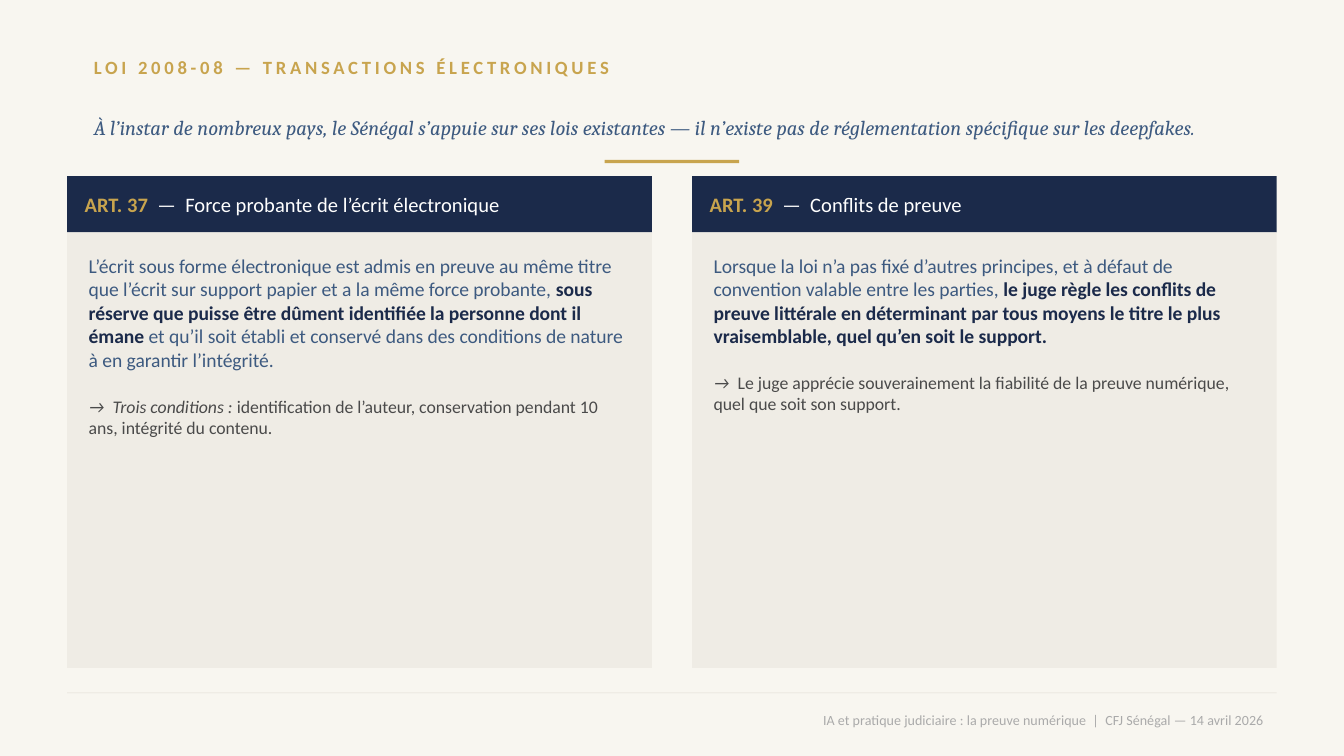
from dataclasses import dataclass

from pptx import Presentation
from pptx import util as u
from pptx.dml.color import RGBColor
from pptx.enum import shapes, text

PX = u.Inches(1) // 200  # 200 px to the inch


@dataclass(frozen=True)
class Theme:
    paper: str = "F8F6F0"
    panel: str = "EFECE5"
    navy: str = "1B2A4A"
    blue: str = "3D5A80"
    gold: str = "C8A44E"
    white: str = "FFFFFF"
    dark: str = "4A4A4A"
    pale: str = "AAAAAA"
    sans: str = "Calibri"
    serif: str = "Cambria"
    heading: float = 11
    kicker: float = 10
    body: float = 10.5
    note: float = 9.5
    footer: float = 7.5
    note_gap: float = 12.8


@dataclass(frozen=True)
class Span:
    words: str
    size: float
    color: str
    bold: bool = False
    italic: bool = False
    font: str = Theme.sans
    spacing: int = 0  # points between letters


class SlideBuilder:
    def __init__(self, deck, theme):
        self.theme = theme
        self.slide = deck.slides.add_slide(deck.slide_layouts[6])
        fill = self.slide.background.fill
        fill.solid()
        fill.fore_color.rgb = RGBColor.from_string(theme.paper)

    def rect(self, left, top, width, height, color):
        box = self.slide.shapes.add_shape(
            shapes.MSO_SHAPE.RECTANGLE, *(n * PX for n in (left, top, width, height)))
        box.shadow.inherit = False
        box.fill.solid()
        box.fill.fore_color.rgb = RGBColor.from_string(color)
        box.line.fill.background()
        return box

    def label(self, left, top, width, height, span, align=text.PP_ALIGN.LEFT):
        box = self.slide.shapes.add_textbox(*(n * PX for n in (left, top, width, height)))
        self.fill_text(box, [[span]], (20, 10, 20, 10), text.MSO_ANCHOR.MIDDLE, align)

    def fill_text(self, box, paragraphs, insets, anchor, align=text.PP_ALIGN.LEFT):
        """Fill a box; every paragraph after the first is set off by the note gap."""
        frame = box.text_frame
        frame.word_wrap = True
        frame.vertical_anchor = anchor
        (frame.margin_left, frame.margin_top,
         frame.margin_right, frame.margin_bottom) = (n * PX for n in insets)
        for index, spans in enumerate(paragraphs):
            para = frame.add_paragraph() if index else frame.paragraphs[0]
            para.alignment = align
            if index:
                para.space_before = u.Pt(self.theme.note_gap)
            for span in spans:
                self.add_run(para, span)

    def add_run(self, para, span):
        run = para.add_run()
        run.text = span.words
        font = run.font
        font.name, font.size = span.font, u.Pt(span.size)
        font.bold, font.italic = span.bold, span.italic
        font.color.rgb = RGBColor.from_string(span.color)
        if span.spacing:
            run._r.get_or_add_rPr().set("spc", str(span.spacing * 100))

    def article(self, left, number, title, law, note):
        """Draw one column: navy title bar above a panel with the law and a note."""
        theme, top, width, bar = self.theme, 262, 870, 84
        header = self.rect(left, top, width, bar, theme.navy)
        self.fill_text(header, [[
            Span(number, theme.heading, theme.gold, bold=True),
            Span(f"  —  {title}", theme.heading, theme.white),
        ]], (26, 10, 26, 10), text.MSO_ANCHOR.MIDDLE)
        panel = self.rect(left, top + bar, width, 648, theme.panel)
        law_spans = [Span(words, theme.body, theme.navy if strong else theme.blue, bold=strong)
                     for words, strong in law]
        note_spans = [Span(words, theme.note, theme.dark, italic=slanted)
                      for words, slanted in note]
        self.fill_text(panel, [law_spans, note_spans], (32, 32, 32, 10), text.MSO_ANCHOR.TOP)


ARTICLES = [
    ("ART. 37", "Force probante de l’écrit électronique",
     [("L’écrit sous forme électronique est admis en preuve au même titre que l’écrit "
       "sur support papier et a la même force probante, ", False),
      ("sous réserve que puisse être dûment identifiée la personne dont il émane", True),
      (" et qu’il soit établi et conservé dans des conditions de nature à en garantir "
       "l’intégrité.", False)],
     [("→  Trois conditions : ", True),
      ("identification de l’auteur, conservation pendant 10 ans, intégrité du contenu.",
       False)]),
    ("ART. 39", "Conflits de preuve",
     [("Lorsque la loi n’a pas fixé d’autres principes, et à défaut de convention valable "
       "entre les parties, ", False),
      ("le juge règle les conflits de preuve littérale en déterminant par tous moyens le "
       "titre le plus vraisemblable, quel qu’en soit le support.", True)],
     [("→  ", True),
      ("Le juge apprécie souverainement la fiabilité de la preuve numérique, quel que soit "
       "son support.", False)]),
]


def main():
    deck = Presentation()
    deck.slide_width, deck.slide_height = 2000 * PX, 1125 * PX
    theme = Theme()
    page = SlideBuilder(deck, theme)

    page.rect(100, 1030, 1800, 2, theme.panel)
    page.label(100, 1036, 1800, 70, Span(
        "IA et pratique judiciaire : la preuve numérique  |  CFJ Sénégal — 14 avril 2026",
        theme.footer, theme.pale), text.PP_ALIGN.RIGHT)
    page.label(120, 60, 1760, 80, Span(
        "LOI 2008-08 — TRANSACTIONS ÉLECTRONIQUES",
        theme.kicker, theme.gold, bold=True, spacing=2))
    page.label(120, 150, 1760, 78, Span(
        "À l’instar de nombreux pays, le Sénégal s’appuie sur ses lois existantes — "
        "il n’existe pas de réglementation spécifique sur les deepfakes.",
        theme.heading, theme.blue, italic=True, font=theme.serif))
    page.rect(900, 238, 200, 5, theme.gold)
    for column, article in enumerate(ARTICLES):
        page.article(100 + column * 930, *article)

    deck.save("out.pptx")


if __name__ == "__main__":
    main()
